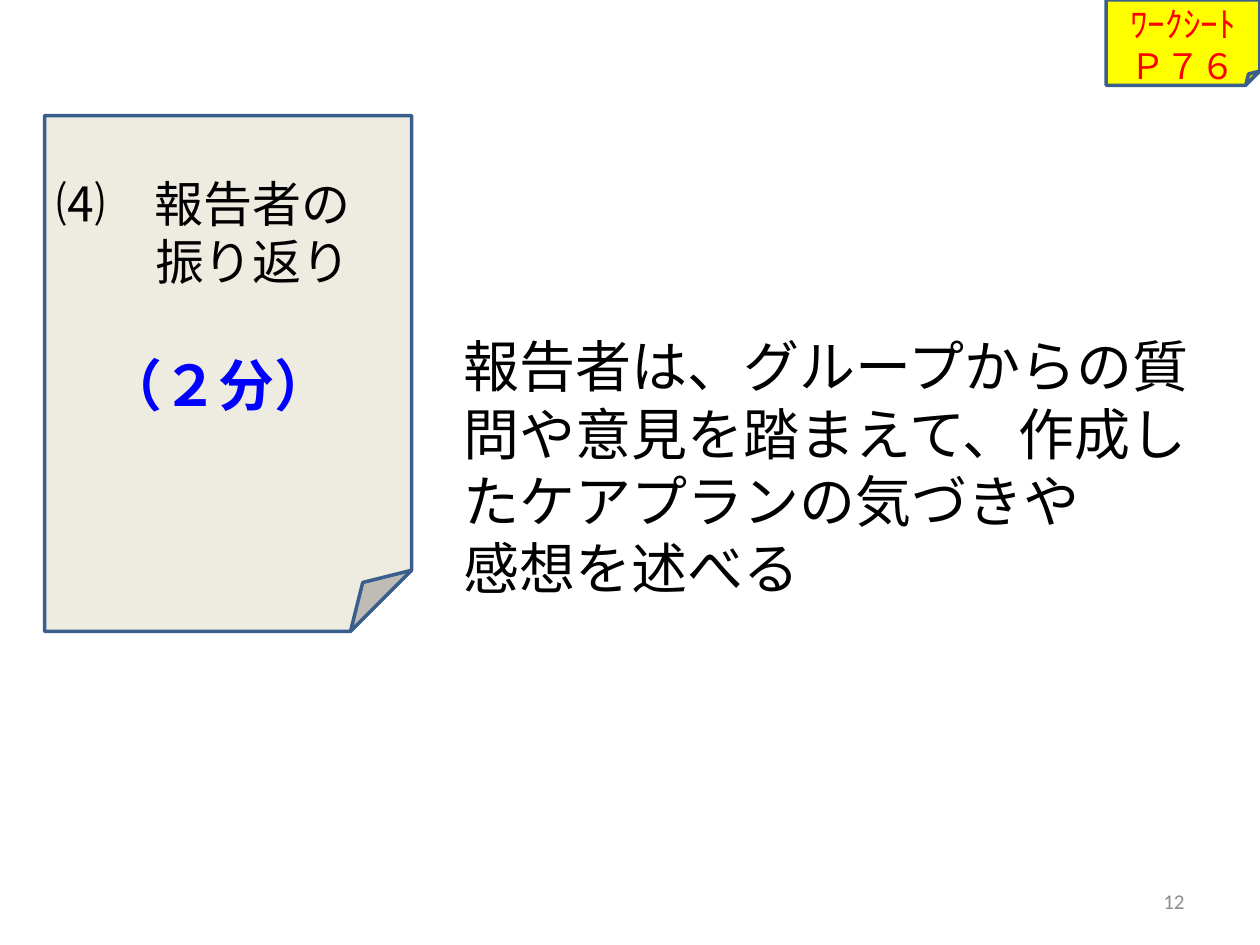
import pptx
import pptx.dml.color
import pptx.enum.shapes
import pptx.enum.text
import pptx.util

Cm, Pt = pptx.util.Cm, pptx.util.Pt
RGBColor = pptx.dml.color.RGBColor
ALIGN = pptx.enum.text.PP_ALIGN
ANCHOR = pptx.enum.text.MSO_ANCHOR

BLACK = RGBColor(0x00, 0x00, 0x00)
RED = RGBColor(0xFF, 0x00, 0x00)
BLUE = RGBColor(0x00, 0x00, 0xFF)
GREY = RGBColor(0x8C, 0x8C, 0x8C)
CREAM = RGBColor(0xEE, 0xEC, 0xE1)
YELLOW = RGBColor(0xFF, 0xFF, 0x00)
OUTLINE = RGBColor(0x3A, 0x5F, 0x8C)
LATIN = "Calibri"
GOTHIC = "Noto Sans CJK JP"


def set_frame(sp, anchor, left=0.25, top=0.13, right=0.25, bottom=0.13):
    """Wrap the text of a shape and set its anchor and insets in cm."""
    tf = sp.text_frame
    tf.word_wrap = True
    tf.vertical_anchor = anchor
    tf.margin_left, tf.margin_top = Cm(left), Cm(top)
    tf.margin_right, tf.margin_bottom = Cm(right), Cm(bottom)
    return tf


def write_lines(tf, lines, size, color, font=LATIN, align=ALIGN.LEFT):
    """Fill a text frame with one paragraph per line."""
    tf.text = "\n".join(lines)
    for p in tf.paragraphs:
        p.alignment = align
        p.font.size = Pt(size)
        p.font.name = font
        p.font.color.rgb = color


def add_note(s, box, fill):
    """Add an outlined sheet with a folded corner."""
    kind = pptx.enum.shapes.MSO_SHAPE.FOLDED_CORNER
    sp = s.shapes.add_shape(kind, *map(Cm, box))
    sp.shadow.inherit = False
    sp.fill.solid()
    sp.fill.fore_color.rgb = fill
    sp.line.color.rgb = OUTLINE
    sp.line.width = Pt(2)
    return sp


def add_step(s, box):
    """Add the sheet that names the step and its duration."""
    tf = set_frame(add_note(s, box, CREAM), ANCHOR.TOP, top=1.16, right=0)
    write_lines(tf, ["⑷　報告者の", "振り返り", "（２分）"], 28, BLACK)
    for p, indent in zip(tf.paragraphs, (0, 56, 28)):
        p._p.get_or_add_pPr().set("marL", str(Pt(indent)))
    p = tf.paragraphs[-1]
    p.space_before = Pt(34)
    p.font.size = Pt(32)
    p.font.name = GOTHIC
    p.font.bold = True
    p.font.color.rgb = BLUE


def add_worksheet_tag(s, box):
    """Add the corner tag with the worksheet page."""
    tf = set_frame(add_note(s, box, YELLOW), ANCHOR.MIDDLE, top=0.5)
    write_lines(tf, ["ﾜｰｸｼｰﾄ", "Ｐ７６"], 20, RED, align=ALIGN.CENTER)


def add_text(s, box, lines, size, color, font=LATIN, align=ALIGN.LEFT):
    """Add a vertically centred text box."""
    tf = set_frame(s.shapes.add_textbox(*map(Cm, box)), ANCHOR.MIDDLE)
    write_lines(tf, lines, size, color, font, align)


def main():
    """Build and save the slide."""
    prs = pptx.Presentation()
    prs.slide_width, prs.slide_height = Cm(25.4), Cm(19.05)
    s = prs.slides.add_slide(prs.slide_layouts[6])
    add_text(s, (18.2, 17.66, 5.93, 1.01), ["12"], 12, GREY, align=ALIGN.RIGHT)
    add_step(s, (0.9, 2.33, 7.4, 10.4))
    add_worksheet_tag(s, (22.3, 0, 3.1, 1.72))
    add_text(
        s,
        (9.1, 6.53, 15.2, 5.74),
        ["報告者は、グループからの質問や意見を踏まえて、作成したケアプランの気づきや", "感想を述べる"],
        32,
        BLACK,
        GOTHIC,
    )
    prs.save("out.pptx")


if __name__ == "__main__":
    main()
